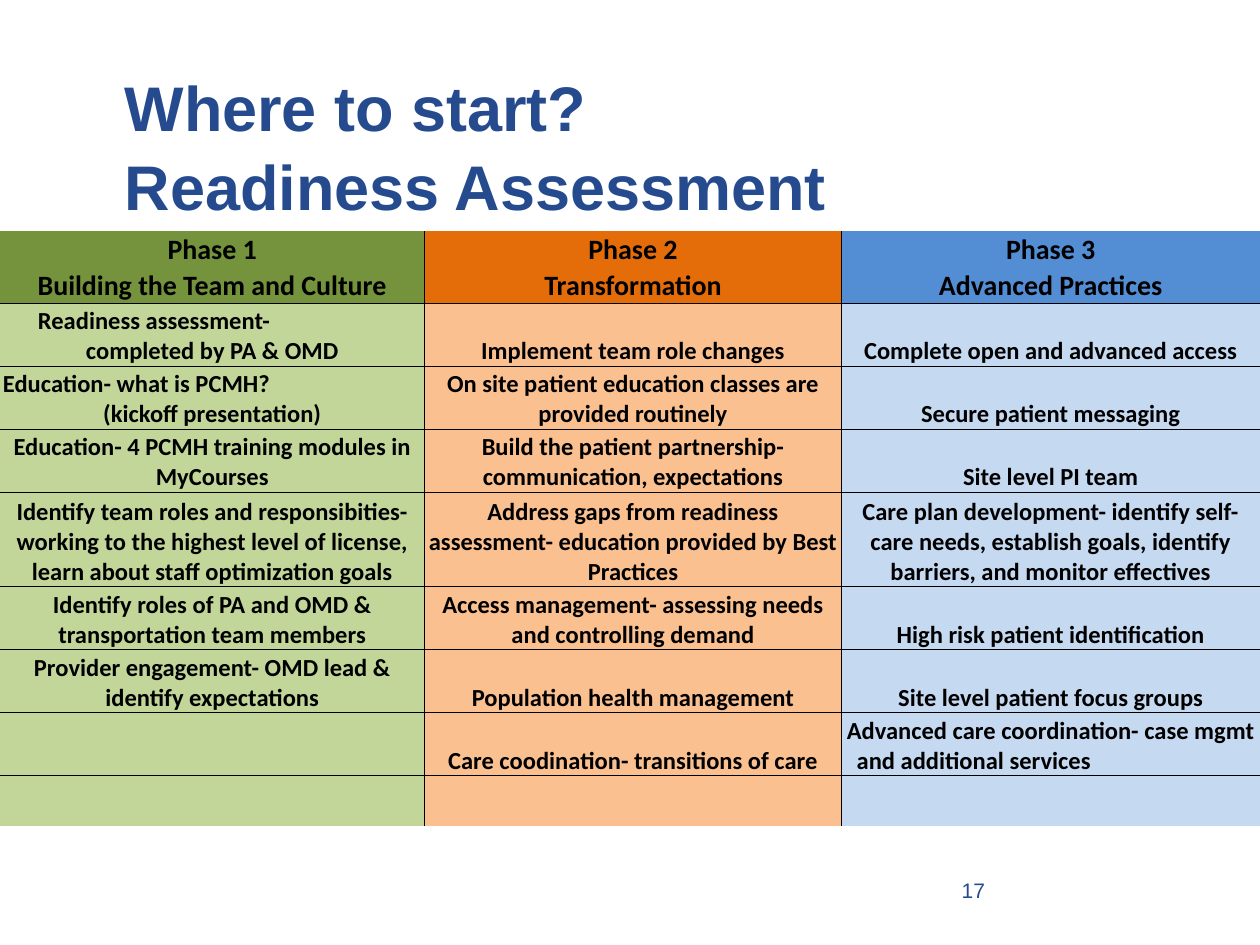
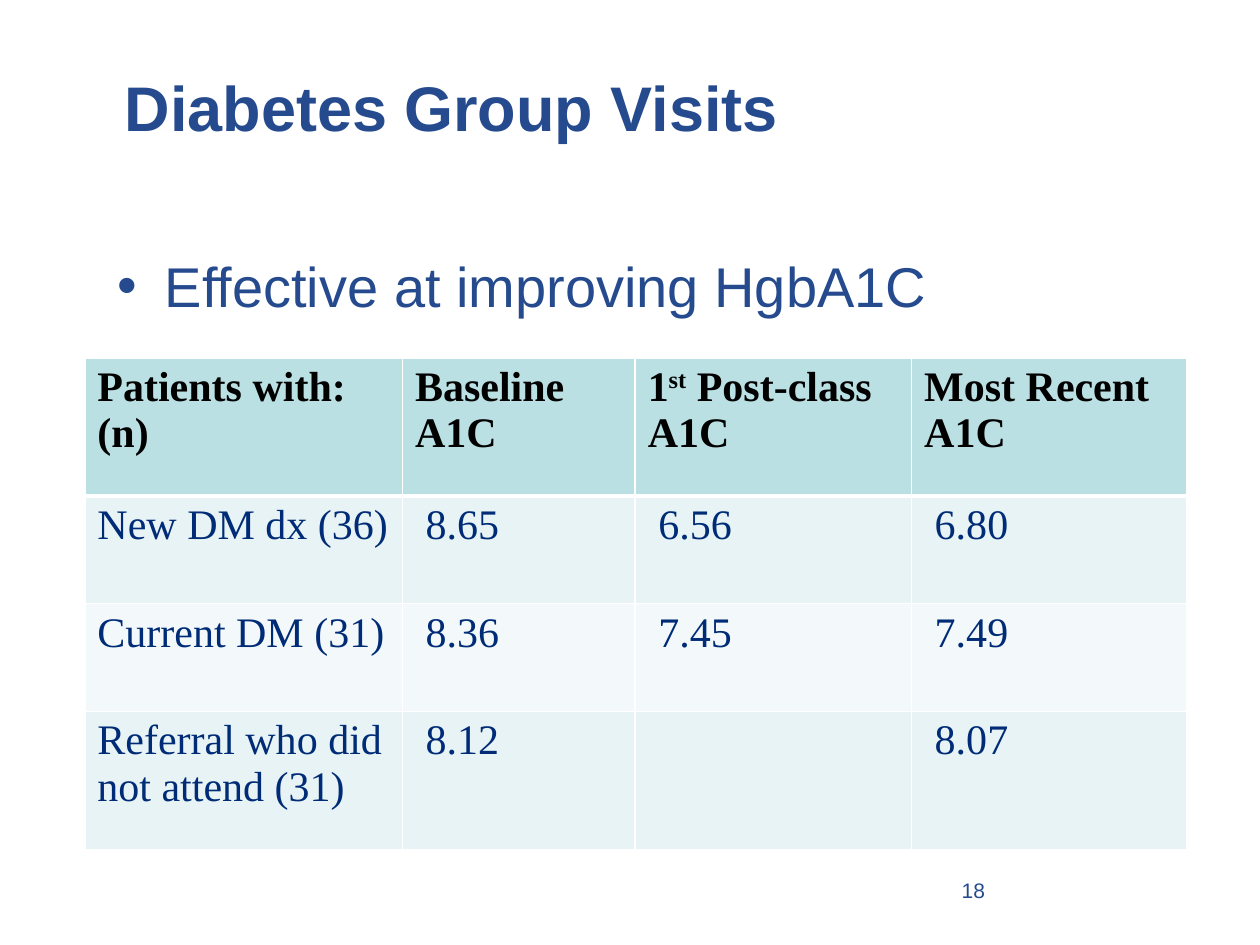
import pptx
import pptx.util
import pptx.dml.color
import pptx.enum.text
import pptx.oxml.ns
from dataclasses import dataclass
from lxml import etree

Pt = pptx.util.Pt
ALIGN = pptx.enum.text.PP_ALIGN
ANCHOR = pptx.enum.text.MSO_ANCHOR
qn = pptx.oxml.ns.qn


@dataclass(frozen=True)
class Theme:
    blue: str = "254B8E"
    navy: str = "002C77"
    black: str = "000000"
    white: str = "FFFFFF"
    phase_heads: tuple = ("75923C", "E46D0A", "538ED5")
    phase_tints: tuple = ("C2D69A", "FAC090", "C5D9F1")
    result_head: str = "BBE0E3"
    result_bands: tuple = ("E7F3F4", "F3F9FA")
    sans: str = "Arial"
    phase_font: str = "Calibri"
    result_font: str = "Times New Roman"
    title_size: int = 36
    body_size: int = 32
    result_size: int = 24
    phase_head_size: int = 16
    phase_size: int = 14
    number_size: int = 12
    empty_size: int = 10


T = Theme()

# Boxes: left, top, width, height in points
TITLE_BOX = (64, 31, 612, 90)
BODY_BOX = (60, 138, 612, 246)
NUMBER_BOX = (486, 498, 84, 24)
PHASE_BOX = (0, 132, 720, 342)
RESULT_BOX = (48.5, 204.5, 630, 281)

PHASE_COLS = (242.6, 238.3, 239.1)
PHASE_ROWS = (20.5, 20.7, 36, 36, 36, 54, 36, 36, 36, 14.4, 14.4)
RESULT_COLS = (181.5, 133, 158, 157.5)
RESULT_ROWS = (79, 61.5, 61.5, 79)

# A cell is a text, or a list of (line, alignment, indent)
PHASES = [
    ("Phase 1", "Phase 2", "Phase 3"),
    ("Building the Team and Culture", "Transformation", "Advanced Practices"),
    ([("Readiness assessment-", ALIGN.LEFT, 21),
      ("completed by PA & OMD", ALIGN.CENTER, 0)],
     "Implement team role changes", "Complete open and advanced access"),
    ([("Education- what is PCMH?", ALIGN.LEFT, 1),
      ("(kickoff presentation)", ALIGN.CENTER, 0)],
     "On site patient education classes are provided routinely",
     "Secure patient messaging"),
    ("Education- 4 PCMH training modules in MyCourses",
     "Build the patient partnership- communication, expectations",
     "Site level PI team"),
    ("Identify team roles and responsibities- working to the highest level "
     "of license, learn about staff optimization goals",
     "Address gaps from readiness assessment- education provided by Best Practices",
     "Care plan development- identify self-care needs, establish goals, "
     "identify barriers, and monitor effectives"),
    ("Identify roles of PA and OMD & transportation team members",
     "Access management- assessing needs and controlling demand",
     "High risk patient identification"),
    ("Provider engagement- OMD lead & identify expectations",
     "Population health management", "Site level patient focus groups"),
    ("", "Care coodination- transitions of care",
     [("Advanced care coordination- case mgmt", ALIGN.CENTER, 0),
      ("and additional services", ALIGN.LEFT, 8)]),
    ("", "", ""),
    ("", "", ""),
]

RESULT_HEADS = ("Patients with: (n)", "Baseline A1C", "1^st^ Post-class A1C",
                "Most Recent A1C")
RESULTS = [
    ("New DM dx (36)", "8.65", "6.56", "6.80"),
    ("Current DM (31)", "8.36", "7.45", "7.49"),
    ("Referral who did not attend (31)", "8.12", "", "8.07"),
]


# Shared helpers
def rgb(color):
    return pptx.dml.color.RGBColor.from_string(color)


def add_run(p, text, font, size, color, bold=False):
    r = p.add_run()
    r.text = text
    r.font.name, r.font.size, r.font.bold = font, Pt(size), bold
    r.font.color.rgb = rgb(color)
    return r


def place(sp, box):
    sp.left, sp.top, sp.width, sp.height = map(Pt, box)


def set_indent(p, left, first=0):
    pPr = p._p.get_or_add_pPr()
    pPr.set("marL", str(Pt(left)))
    pPr.set("indent", str(Pt(first)))
    return pPr


def prepare_frame(tf, top):
    tf.word_wrap = True
    tf.auto_size = pptx.enum.text.MSO_AUTO_SIZE.NONE
    tf.vertical_anchor = ANCHOR.TOP
    tf.margin_left = tf.margin_right = Pt(7.2)
    tf.margin_top, tf.margin_bottom = Pt(top), Pt(3.6)


def set_borders(cell, color, **widths):
    """Draw each side L, R, T, B; a side of width 0 stays empty."""
    tcPr = cell._tc.get_or_add_tcPr()
    for side in "LRTB":
        width = widths.get(side, 0)
        ln = etree.SubElement(tcPr, qn(f"a:ln{side}"), w=str(Pt(width)))
        if width:
            fill = etree.SubElement(ln, qn("a:solidFill"))
            etree.SubElement(fill, qn("a:srgbClr"), val=color)
        else:
            etree.SubElement(ln, qn("a:noFill"))


def fill_cell(cell, color):
    cell.fill.solid()
    cell.fill.fore_color.rgb = rgb(color)


def mark_empty(cell):
    """Keep an empty cell from stretching its row."""
    p = cell.text_frame.paragraphs[0]._p
    etree.SubElement(p, qn("a:endParaRPr"), sz=str(T.empty_size * 100))


def add_grid(s, box, cols, rows):
    table = s.shapes.add_table(len(rows), len(cols), *map(Pt, box)).table
    for col, width in zip(table.columns, cols):
        col.width = Pt(width)
    for row, height in zip(table.rows, rows):
        row.height = Pt(height)
    return table


# Title and page number
def add_title(s, box, lines):
    sp = s.shapes.title
    place(sp, box)
    prepare_frame(sp.text_frame, 6.6)
    p = sp.text_frame.paragraphs[0]
    p.alignment, p.line_spacing = ALIGN.LEFT, 1.04
    for i, line in enumerate(lines):
        if i:
            p.add_line_break()
        add_run(p, line, T.sans, T.title_size, T.blue, True)


def add_number(s, box, number):
    sp = s.shapes.add_textbox(*map(Pt, box))
    prepare_frame(sp.text_frame, 3.6)
    p = sp.text_frame.paragraphs[0]
    p.alignment = ALIGN.RIGHT
    add_run(p, str(number), T.sans, T.number_size, T.blue)


# Bullet list
def add_bullets(s, box, items):
    sp = s.placeholders[1]
    place(sp, box)
    tf = sp.text_frame
    prepare_frame(tf, 5.6)
    for i, item in enumerate(items):
        p = tf.add_paragraph() if i else tf.paragraphs[0]
        pPr = set_indent(p, 27, -27)
        etree.SubElement(pPr, qn("a:buChar"), char="•")
        p.space_before = Pt(6.4 if i else 0)
        add_run(p, item, T.sans, T.body_size, T.blue)


# Table of the three phases
def add_phases(s, box):
    table = add_grid(s, box, PHASE_COLS, PHASE_ROWS)
    last_ruled = len(PHASES) - 3
    for i, texts in enumerate(PHASES):
        head = i < 2
        fills = T.phase_heads if head else T.phase_tints
        size = T.phase_head_size if head else T.phase_size
        for j, content in enumerate(texts):
            cell = table.cell(i, j)
            set_borders(cell, T.black, L=0.5 if j else 0, R=0.5,
                        T=0.5 if 2 <= i <= last_ruled + 1 else 0,
                        B=0.5 if 1 <= i <= last_ruled else 0)
            fill_cell(cell, fills[j])
            cell.vertical_anchor = ANCHOR.BOTTOM
            cell.margin_left = cell.margin_right = cell.margin_top = Pt(0.7)
            cell.margin_bottom = Pt(0)
            if not content:
                mark_empty(cell)
                continue
            lines = [(content, ALIGN.CENTER, 0)] if isinstance(content, str) else content
            tf = cell.text_frame
            for k, (text, align, indent) in enumerate(lines):
                p = tf.add_paragraph() if k else tf.paragraphs[0]
                p.alignment = align
                set_indent(p, indent)
                add_run(p, text, T.phase_font, size, T.black, True)


# Table of A1C results
def add_results(s, box):
    table = add_grid(s, box, RESULT_COLS, RESULT_ROWS)
    for i, texts in enumerate([RESULT_HEADS] + RESULTS):
        head = i == 0
        for j, text in enumerate(texts):
            cell = table.cell(i, j)
            set_borders(cell, T.white, L=1, R=1, T=3 if i == 1 else 1,
                        B=3 if head else 1)
            fill_cell(cell, T.result_head if head else T.result_bands[(i - 1) % 2])
            if not text:
                mark_empty(cell)
                continue
            p = cell.text_frame.paragraphs[0]
            set_indent(p, 6 if j and not head else 0)
            # Text between carets is raised
            for k, part in enumerate(text.split("^")):
                r = add_run(p, part, T.result_font, T.result_size,
                            T.black if head else T.navy, head)
                if k % 2:
                    r.font._element.set("baseline", "30000")


# Slides
def readiness_slide(prs):
    s = prs.slides.add_slide(prs.slide_layouts[5])
    add_title(s, TITLE_BOX, ["Where to start?", "Readiness Assessment"])
    add_number(s, NUMBER_BOX, 17)
    add_phases(s, PHASE_BOX)


def diabetes_slide(prs):
    s = prs.slides.add_slide(prs.slide_layouts[1])
    add_title(s, TITLE_BOX, ["Diabetes Group Visits"])
    add_bullets(s, BODY_BOX, ["Effective at improving HgbA1C"])
    add_number(s, NUMBER_BOX, 18)
    add_results(s, RESULT_BOX)


def main():
    prs = pptx.Presentation()
    prs.slide_width, prs.slide_height = Pt(720), Pt(540)
    readiness_slide(prs)
    diabetes_slide(prs)
    prs.save("out.pptx")


if __name__ == "__main__":
    main()
